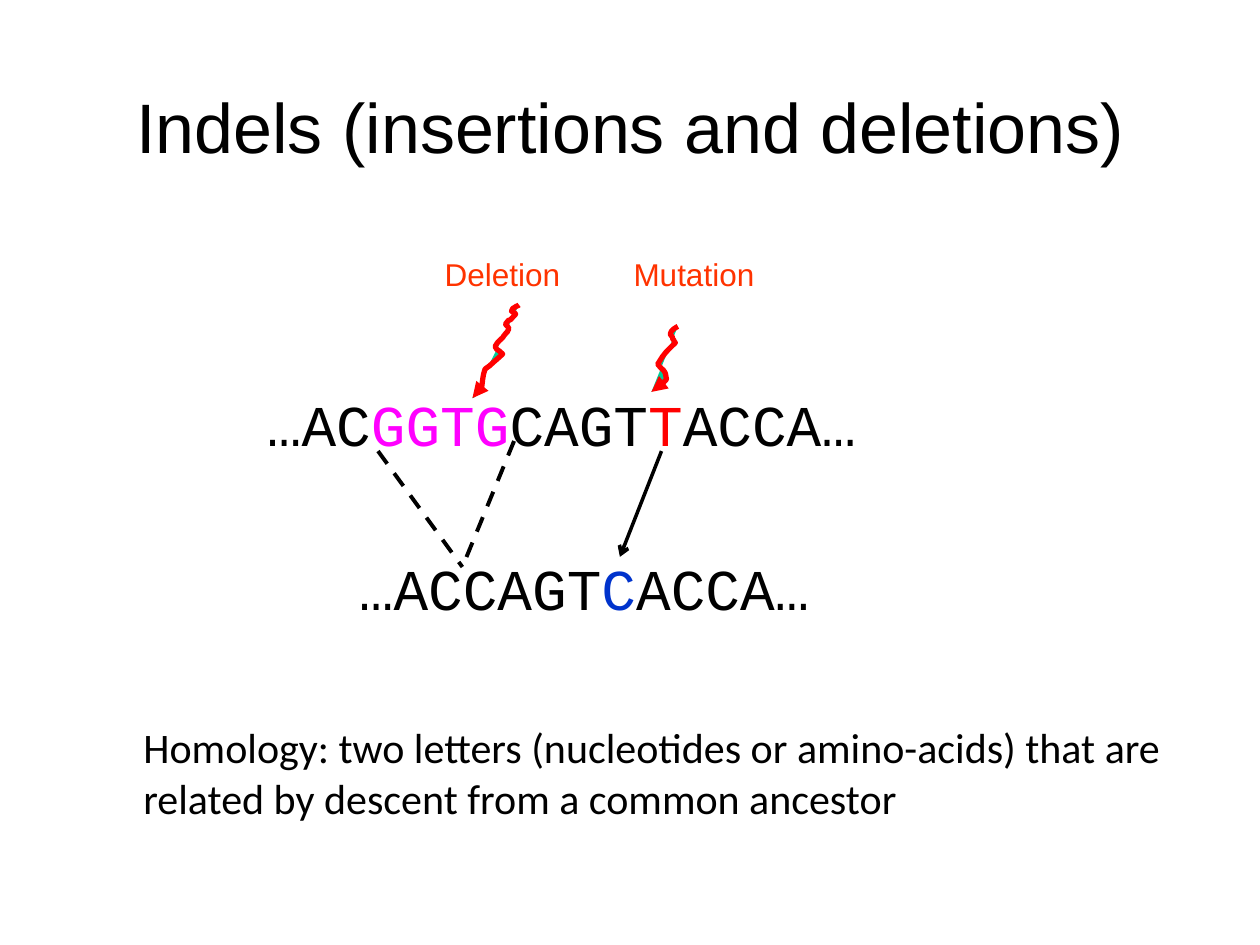
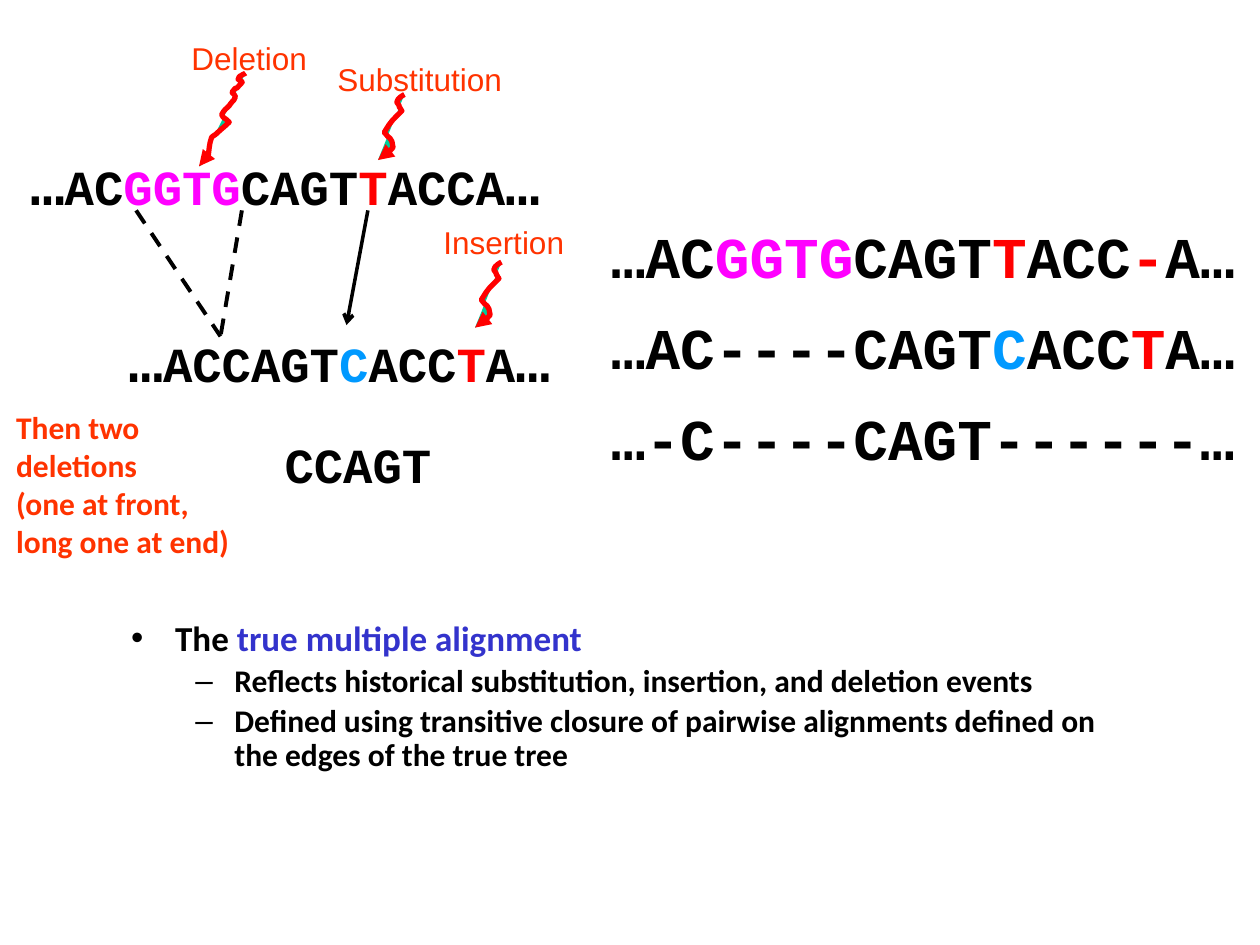
from dataclasses import dataclass

from lxml import etree
from pptx import Presentation, util as u
from pptx.dml.color import RGBColor
from pptx.enum import dml, text
from pptx.oxml.ns import qn


@dataclass(frozen=True)
class Theme:
    black: str = "000000"
    deleted: str = "FF00FF"
    changed: str = "FF0000"
    label: str = "FF3300"
    dark_blue: str = "0033CC"
    light_blue: str = "0099FF"
    term: str = "3333CC"
    squiggle_fill: str = "00CC99"
    sans: str = "Arial"
    body: str = "Calibri"
    mono: str = "Courier New"
    title_size: int = 40
    sequence_size: int = 33
    small_sequence_size: int = 28
    note_size: int = 24
    point_size: int = 20
    label_size: int = 18


T = Theme()

# Curves as a start point followed by cubic segments, relative to the top left corner
LONG_SQUIGGLE = [
    (0, .74), (.01, .74), (.02, .73), (.03, .72), (.04, .71), (.07, .68), (.07, .68),
    (.08, .62), (.08, .56), (.10, .51), (.11, .50), (.13, .49), (.14, .48),
    (.17, .45), (.21, .42), (.24, .39), (.19, .34), (.20, .37), (.18, .33),
    (.20, .29), (.22, .28), (.24, .26), (.25, .24), (.28, .21), (.28, .21),
    (.28, .20), (.29, .19), (.29, .19), (.28, .15), (.24, .17), (.28, .13),
    (.28, .12), (.30, .12), (.30, .12), (.35, .06), (.36, .08), (.31, .05),
    (.33, .01), (.31, .04), (.35, .01), (.36, .01), (.37, 0), (.37, 0)]
SHORT_SQUIGGLE = [
    (0, .52), (.04, .49), (.09, .46), (.12, .42), (.11, .33), (.09, .36), (.05, .30),
    (.11, .20), (.12, .20), (.19, .13), (.18, .12), (.18, .11), (.17, .10),
    (.17, .08), (.15, .07), (.15, .06), (.15, .03), (.21, 0), (.21, 0)]


def write(shape, paragraphs, font, size, color=T.black, bold=False,
          spacing=None, before=None, wrap=True, grow=True):
    """Fill a shape; each paragraph is a list of (text, colour, size) runs, the last two optional."""
    frame = shape.text_frame
    frame.word_wrap = wrap
    if grow:
        frame.auto_size = text.MSO_AUTO_SIZE.SHAPE_TO_FIT_TEXT
    for index, runs in enumerate(paragraphs):
        paragraph = frame.add_paragraph() if index else frame.paragraphs[0]
        if spacing:
            paragraph.line_spacing = spacing
        if index == 0:
            paragraph.space_before = u.Pt(0)
        elif before:
            paragraph.space_before = u.Pt(before)
        for words, *own in runs:
            run = paragraph.add_run()
            run.text = words
            run.font.name = font
            run.font.bold = bold
            run.font.size = u.Pt(own[1] if len(own) > 1 else size)
            run.font.color.rgb = RGBColor.from_string(own[0] if own else color)


def draw_squiggle(slide, left, top, curve):
    """Draw a wavy arrow whose head sits at the start of the curve."""
    points = [curve[0]]
    for i in range(0, len(curve) - 1, 3):
        a, b, c, d = curve[i:i + 4]
        for t in (.25, .5, .75, 1):
            s = 1 - t
            points.append([s**3 * a[k] + 3 * s * s * t * b[k] + 3 * s * t * t * c[k] + t**3 * d[k]
                           for k in (0, 1)])
    emu = [(u.Inches(left + x), u.Inches(top + y)) for x, y in points]
    builder = slide.shapes.build_freeform(*emu[0], scale=1.0)
    builder.add_line_segments(emu[1:], close=False)
    wave = builder.convert_to_shape()
    wave.shadow.inherit = False
    wave.fill.solid()
    wave.fill.fore_color.rgb = RGBColor.from_string(T.squiggle_fill)
    wave.line.color.rgb = RGBColor.from_string(T.changed)
    wave.line.width = u.Pt(3)
    etree.SubElement(wave.line._get_or_add_ln(), qn("a:headEnd"), type="triangle")


prs = Presentation()
prs.slide_width, prs.slide_height = u.Inches(10), u.Inches(7.5)
indels = prs.slides.add_slide(prs.slide_layouts.get_by_name("Title Only"))
alignment = prs.slides.add_slide(prs.slide_layouts.get_by_name("Title and Content"))

# Placeholders
title = indels.shapes.title
title.left, title.top, title.width, title.height = map(u.Inches, (.25, .58, 9.5, .83))
write(title, [[("Indels (insertions and deletions)",)]], T.sans, T.title_size, grow=False)

unused_title = alignment.shapes.title.element
unused_title.getparent().remove(unused_title)
points = alignment.placeholders[1]
points.left, points.top, points.width, points.height = map(u.Inches, (.92, 4.93, 8.05, 1.69))
frame = points.text_frame
frame.margin_left = frame.margin_top = frame.margin_right = frame.margin_bottom = 0
write(points, [
    [("The ",), ("true multiple alignment", T.term)],
    [("Reflects historical substitution, insertion, and deletion events", T.black, T.label_size)],
    [("Defined using transitive closure of pairwise alignments defined on the edges of the true tree",
      T.black, T.label_size)],
], T.body, T.point_size, bold=True, spacing=.9, grow=False)
for index, paragraph in enumerate(frame.paragraphs):
    paragraph.level = min(index, 1)
    margin, indent = ((.94, -.31) if index else (.47, -.35))
    properties = paragraph._p.get_or_add_pPr()
    properties.set("marL", str(u.Inches(margin)))
    properties.set("indent", str(u.Inches(indent)))

# Sequences
small = T.small_sequence_size
sequences = [
    (indels, (2.02, 3.08, 4.88, .62), False, False, [
        [("…AC",), ("GGTG", T.deleted), ("CAGT",), ("T", T.changed), ("ACCA…",)]]),
    (indels, (2.75, 4.38, 3.92, .62), False, True, [
        [("…ACCAGT",), ("C", T.dark_blue), ("ACCA…",)]]),
    (alignment, (4.75, 1.75, 5.25, 2.67), True, True, [
        [("…AC",), ("GGTG", T.deleted), ("CAGT",), ("T", T.changed), ("ACC",),
         ("-", T.changed), ("A…",)],
        [("…AC----CAGT",), ("C", T.light_blue), ("ACC",), ("T", T.changed), ("A…",)],
        [("…-C----CAGT------…",)]]),
    (alignment, (.14, 1.17, 4.25, .62), True, False, [
        [("…",), ("AC", T.black, small), ("GGTG", T.deleted, small), ("CAGT", T.black, small),
         ("T", T.changed, small), ("ACCA", T.black, small), ("…",)]]),
    (alignment, (.92, 2.57, 3.92, .62), True, True, [
        [("…",), ("ACCAGT", T.black, small), ("C", T.light_blue, small), ("ACC", T.black, small),
         ("T", T.changed, small), ("A", T.black, small), ("…",)]]),
]
for slide, box, bold, wrap, rows in sequences:
    write(slide.shapes.add_textbox(*map(u.Inches, box)), rows, T.mono, T.sequence_size,
          bold=bold, spacing=.94, before=14.8, wrap=wrap)

survivor = alignment.shapes.add_textbox(*map(u.Inches, (2.16, 3.4, 1.38, .57)))
write(survivor, [[("CCAGT",)]], T.mono, small, bold=True, wrap=False)

# Event labels and their wavy arrows
events = [
    (indels, "Deletion", (3.43, 2, 1.42, .47), (3.75, 2.42), LONG_SQUIGGLE),
    (indels, "Mutation", (4.93, 2, 1.48, .47), (5.17, 2.59), SHORT_SQUIGGLE),
    (alignment, "Deletion", (1.42, .29, 1.12, .38), (1.58, .58), LONG_SQUIGGLE),
    (alignment, "Substitution", (2.58, .45, 1.51, .38), (3, .75), SHORT_SQUIGGLE),
    (alignment, "Insertion", (3.42, 1.75, 1.16, .38), (3.77, 2.08), SHORT_SQUIGGLE),
]
for slide, event, box, corner, curve in events:
    write(slide.shapes.add_textbox(*map(u.Inches, box)), [[(event,)]], T.sans, T.label_size,
          color=T.label, spacing=.93, wrap=False)
    draw_squiggle(slide, *corner, curve)

# Links from ancestor to descendant: dashed for the deleted stretch, an arrow for the changed letter
links = [
    (indels, (3, 3.58, 3.67, 4.5), True),
    (indels, (4.08, 3.5, 3.67, 4.5), True),
    (indels, (5.25, 3.58, 4.92, 4.42), False),
    (alignment, (1.08, 1.67, 1.75, 2.67), True),
    (alignment, (1.92, 1.67, 1.75, 2.67), True),
    (alignment, (2.92, 1.67, 2.75, 2.58), False),
]
for slide, ends, is_deletion in links:
    link = slide.shapes.add_connector(1, *map(u.Inches, ends))
    link.line.color.rgb = RGBColor.from_string(T.black)
    link.line.width = u.Pt(2.25 if is_deletion else 2)
    if is_deletion:
        link.line.dash_style = dml.MSO_LINE.DASH
    else:
        etree.SubElement(link.line._get_or_add_ln(), qn("a:tailEnd"), type="arrow")
    etree.SubElement(link._element.spPr, qn("a:effectLst"))

# Remarks
homology = indels.shapes.add_textbox(*map(u.Inches, (1.04, 5.68, 8.43, .91)))
write(homology, [[("Homology: two letters (nucleotides or amino-acids) that are",)],
                 [("related by descent from a common ancestor",)]],
      T.body, T.note_size, wrap=False)
later_deletions = alignment.shapes.add_textbox(*map(u.Inches, (.03, 3.19, 2.03, 1.62)))
write(later_deletions, [[("Then two deletions",)], [("(one at front, long one at end)",)]],
      T.body, T.label_size, color=T.label, bold=True)

prs.save("out.pptx")
